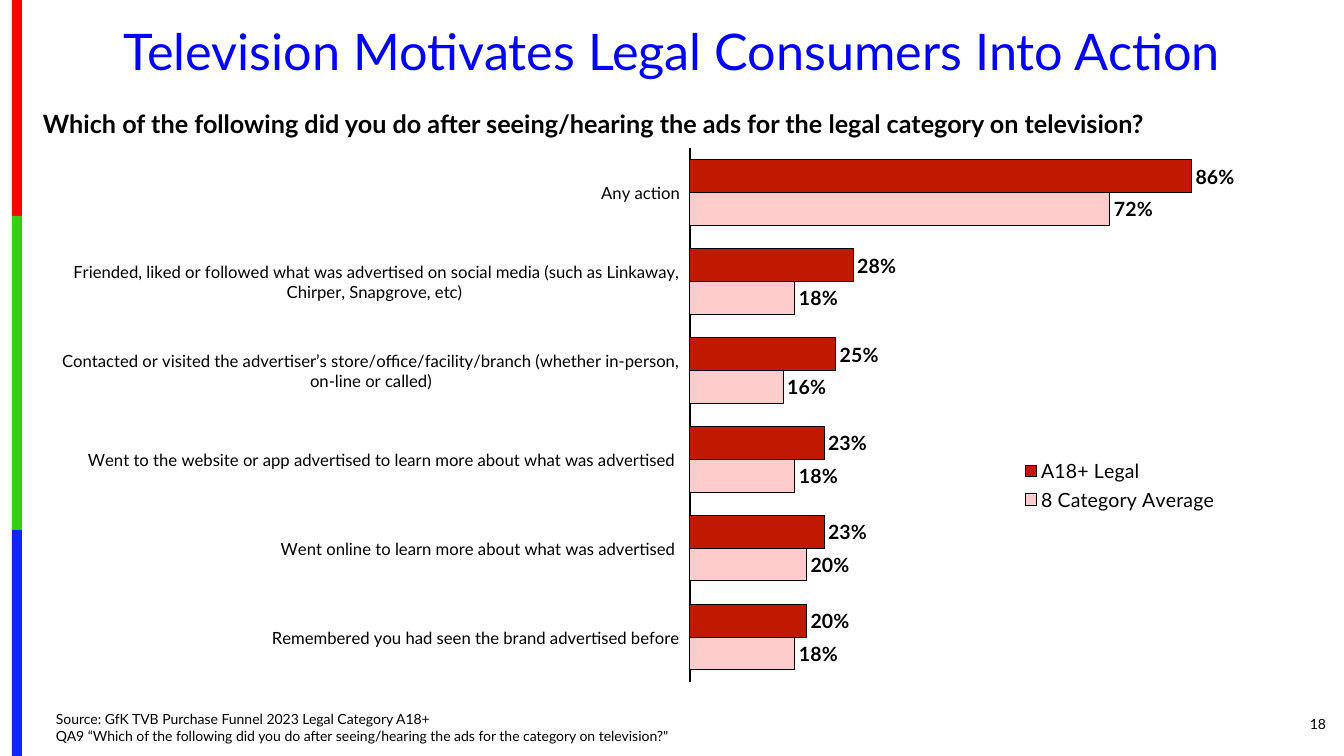
from lxml import etree
from pptx import Presentation
from pptx.chart.data import CategoryChartData
from pptx.dml.color import RGBColor
from pptx.enum.chart import XL_CHART_TYPE, XL_LABEL_POSITION, XL_LEGEND_POSITION, XL_TICK_LABEL_POSITION, XL_TICK_MARK
from pptx.enum.shapes import MSO_SHAPE
from pptx.enum.text import MSO_ANCHOR, MSO_AUTO_SIZE, PP_ALIGN
from pptx.oxml.ns import qn
from pptx.util import Emu, Pt

RECTANGLE = MSO_SHAPE.RECTANGLE
BARS = XL_CHART_TYPE.BAR_CLUSTERED
OUTSIDE_END = XL_LABEL_POSITION.OUTSIDE_END
LEGEND_RIGHT = XL_LEGEND_POSITION.RIGHT
NO_TICK = XL_TICK_MARK.NONE
LABELS_LOW = XL_TICK_LABEL_POSITION.LOW
LEFT, CENTER, RIGHT = PP_ALIGN.LEFT, PP_ALIGN.CENTER, PP_ALIGN.RIGHT
TOP, MIDDLE = MSO_ANCHOR.TOP, MSO_ANCHOR.MIDDLE
NO_AUTOFIT = MSO_AUTO_SIZE.NONE

PX_PER_INCH = 100.8
PAGE_WIDTH, PAGE_HEIGHT = 1344, 756
FONT = "Lato"
BLACK, BLUE = "000000", "0000FF"

STRIPES = [("FE0000", 0, 216), ("36CF12", 216, 530), ("1322FE", 530, 756)]
ACTIONS = [
    ("Remembered you had seen the brand advertised before", 0.18, 0.20),
    ("Went online to learn more about what was advertised ", 0.20, 0.23),
    ("Went to the website or app advertised to learn more about what was advertised ", 0.18, 0.23),
    ("Contacted or visited the advertiser’s store/office/facility/branch "
     "(whether in-person, on-line or called)", 0.16, 0.25),
    ("Friended, liked or followed what was advertised on social media "
     "(such as Linkaway, Chirper, Snapgrove, etc) ", 0.18, 0.28),
    ("Any action", 0.72, 0.86),
]
SERIES = [("8 Category Average", "FFCCCC"), ("A18+ Legal", "C01900")]


def px(length):
    """Turn a length in px into EMU."""
    return Emu(round(length * 914400 / PX_PER_INCH))


def color(hex_text):
    """Turn a hex string into a colour."""
    return RGBColor.from_string(hex_text)


def style_font(font, size, hex_text=BLACK, bold=False):
    """Give a font the deck's face, a size, a colour and a weight."""
    font.name = FONT
    font.size = Pt(size)
    font.bold = bold
    font.color.rgb = color(hex_text)


def fill_text(shape, lines, size, hex_text=BLACK, bold=False, align=LEFT, anchor=TOP):
    """Write one paragraph, its lines parted by line breaks."""
    frame = shape.text_frame
    frame.word_wrap = True
    frame.auto_size = NO_AUTOFIT
    frame.vertical_anchor = anchor
    para = frame.paragraphs[0]
    para.alignment = align
    for index, line in enumerate(lines):
        if index:
            para.add_line_break()
        span = para.add_run()
        span.text = line
        style_font(span.font, size, hex_text, bold)
    return para


def add_text(page, box, lines, size, **style):
    """Place a text box in the given box."""
    shape = page.shapes.add_textbox(*map(px, box))
    fill_text(shape, lines, size, **style)


def add_stripes(page, box):
    """Stack the coloured stripes down the given box."""
    left, top, width, _ = box
    for hex_text, start, end in STRIPES:
        stripe = page.shapes.add_shape(RECTANGLE, px(left), px(top + start), px(width), px(end - start))
        stripe.shadow.inherit = False
        stripe.fill.solid()
        stripe.fill.fore_color.rgb = color(hex_text)
        stripe.line.fill.background()


def set_title(page, box, text):
    """Move and format the title placeholder."""
    title = page.shapes.title
    title.left, title.top, title.width, title.height = map(px, box)
    para = fill_text(title, [text], 36, BLUE, align=CENTER, anchor=MIDDLE)
    para.line_spacing = 0.9


def set_layout(parent, index, fractions, inner=False):
    """Fix a chart part at fractions of the chart's size."""
    for old in parent.findall(qn("c:layout")):
        parent.remove(old)
    layout = etree.Element(qn("c:layout"))
    manual = etree.SubElement(layout, qn("c:manualLayout"))
    settings = [("layoutTarget", "inner")] if inner else []
    settings += [("xMode", "edge"), ("yMode", "edge")]
    settings += zip("xywh", map(str, fractions))
    for name, value in settings:
        etree.SubElement(manual, qn(f"c:{name}")).set("val", value)
    parent.insert(index, layout)


def style_axes(chart):
    """Show a plain category axis and hide the value axis."""
    categories = chart.category_axis
    categories.major_tick_mark = categories.minor_tick_mark = NO_TICK
    categories.tick_label_position = LABELS_LOW
    categories.has_major_gridlines = False
    categories.format.line.color.rgb = color(BLACK)
    categories.format.line.width = Pt(1)
    style_font(categories.tick_labels.font, 12)
    values = chart.value_axis
    values.minimum_scale, values.maximum_scale = 0, 1
    values.has_major_gridlines = False
    values.visible = False


def style_series(series, hex_text):
    """Colour a series and label its bars."""
    series.format.fill.solid()
    series.format.fill.fore_color.rgb = color(hex_text)
    series.format.line.color.rgb = color(BLACK)
    series.format.line.width = Pt(0.75)
    labels = series.data_labels
    labels.show_value = True
    labels.number_format = "0%"
    labels.number_format_is_linked = False
    labels.position = OUTSIDE_END
    style_font(labels.font, 14, bold=True)


def add_action_chart(page, box):
    """Draw the clustered bars of actions taken."""
    names, *columns = zip(*ACTIONS)
    data = CategoryChartData(number_format="0%")
    data.categories = names
    for (name, _), column in zip(SERIES, columns):
        data.add_series(name, column)
    chart = page.shapes.add_chart(BARS, *map(px, box), data).chart
    chart.has_title = False
    style_font(chart.font, 10)
    style_axes(chart)
    plot = chart.plots[0]
    plot.gap_width, plot.overlap = 72, 0
    plot.vary_by_categories = False
    for series, (_, hex_text) in zip(plot.series, SERIES):
        style_series(series, hex_text)
    chart.has_legend = True
    chart.legend.position = LEGEND_RIGHT
    chart.legend.include_in_layout = False
    style_font(chart.legend.font, 14)
    root = chart.element.find(qn("c:chart"))
    set_layout(root.find(qn("c:plotArea")), 0, (0.505, 0.027, 0.475, 0.946), inner=True)
    set_layout(root.find(qn("c:legend")), 1, (0.77, 0.57, 0.17, 0.11))


def build_chart_page(deck):
    """Build the page with the title, question, chart and source."""
    page = deck.slides.add_slide(deck.slide_layouts[5])
    add_stripes(page, (12, 0, 10, PAGE_HEIGHT))
    add_action_chart(page, (62, 133, 1236, 564))
    set_title(page, (46, 21, 1252, 66), "Television Motivates Legal Consumers Into Action")
    add_text(page, (1227, 704, 109, 40), ["18"], 10, align=RIGHT, anchor=MIDDLE)
    add_text(page, (46, 706, 953, 44), [
        "Source: GfK TVB Purchase Funnel 2023 Legal Category A18+",
        "QA9 “Which of the following did you do after seeing/hearing the ads for the category on television?\"",
    ], 10)
    add_text(page, (33, 103, 1296, 40), [
        "Which of the following did you do after seeing/hearing the ads for the legal category on television?",
    ], 18, bold=True)


def main():
    """Make the deck and save it."""
    deck = Presentation()
    deck.slide_width, deck.slide_height = px(PAGE_WIDTH), px(PAGE_HEIGHT)
    build_chart_page(deck)
    deck.save("out.pptx")


if __name__ == "__main__":
    main()
